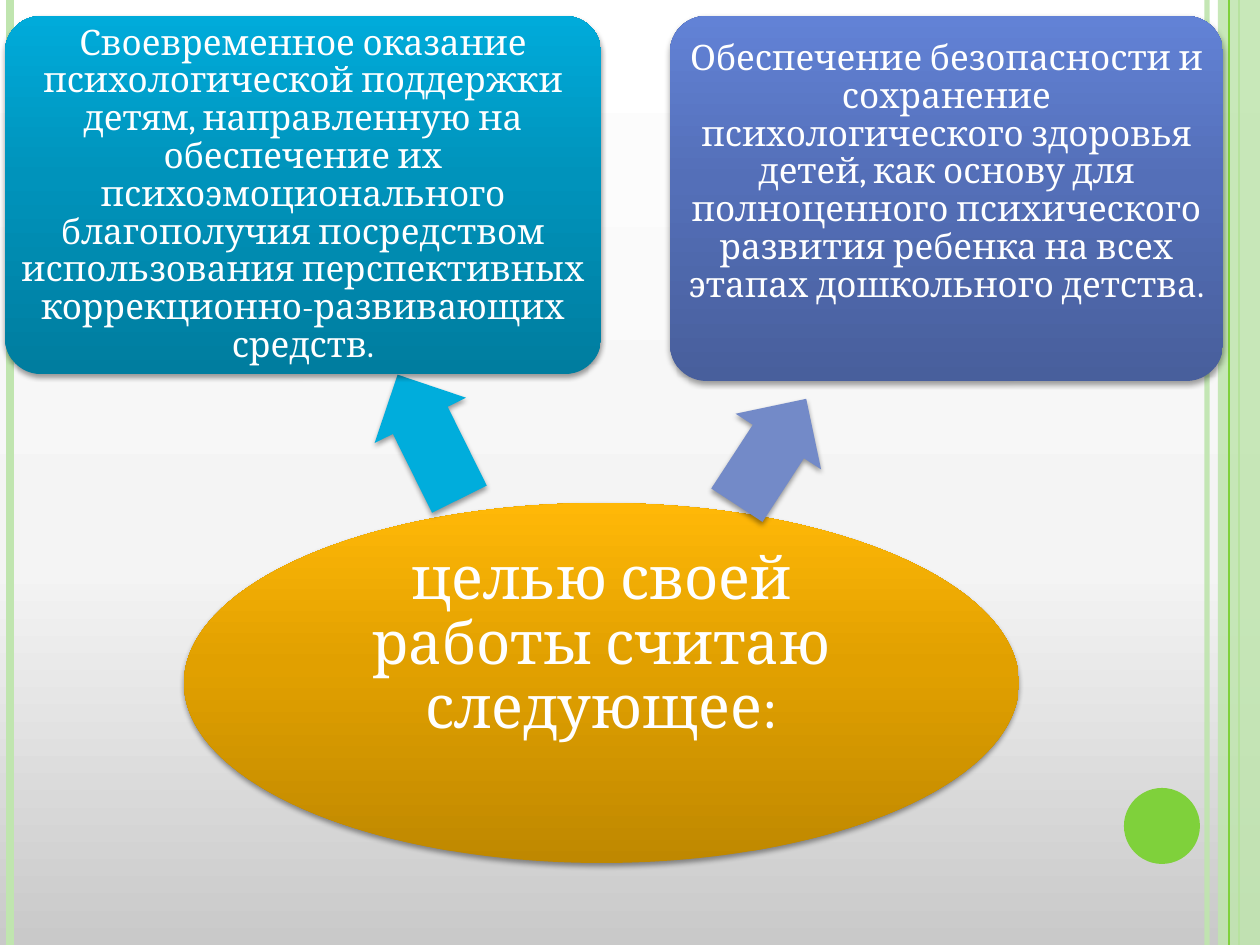
"""Build a slide with a central goal ellipse and arrows to two goal cards."""
from lxml import etree
from pptx import Presentation
from pptx.dml.color import RGBColor
from pptx.enum.shapes import MSO_CONNECTOR, MSO_SHAPE
from pptx.enum.text import MSO_ANCHOR, PP_ALIGN
from pptx.oxml.ns import qn
from pptx.util import Pt

PX = 914400 / 126
WIDTH, HEIGHT = 1260, 945
STRAIGHT = MSO_CONNECTOR.STRAIGHT
RECTANGLE, ELLIPSE = MSO_SHAPE.RECTANGLE, MSO_SHAPE.OVAL
CARD, ARROW = MSO_SHAPE.ROUNDED_RECTANGLE, MSO_SHAPE.LEFT_ARROW
MIDDLE, CENTER = MSO_ANCHOR.MIDDLE, PP_ALIGN.CENTER
WHITE = RGBColor(0xFF, 0xFF, 0xFF)
PALE_GREEN = RGBColor(0xC0, 0xE5, 0xAF)
GREEN = RGBColor(0x7F, 0xD1, 0x3B)
CYAN = RGBColor(0x00, 0xAD, 0xDC)
PERIWINKLE = RGBColor(0x73, 0x8A, 0xC8)
PAGE_STOPS = ((0, "C9C9C9"), (40, "F4F4F4"), (100, "FFFFFF"))
AMBER_STOPS = ((0, "BF8800"), (55, "E1A000"), (100, "FFB807"))
CYAN_STOPS = ((0, "007D9F"), (55, "0093BB"), (100, "00ABDA"))
BLUE_STOPS = ((0, "485F9C"), (55, "546FB8"), (100, "6282D6"))

AIM = "целью своей работы считаю следующее:"
SUPPORT = (
    "Своевременное оказание психологической поддержки детям, направленную на "
    "обеспечение их психоэмоционального благополучия посредством использования "
    "перспективных коррекционно-развивающих средств."
)
SAFETY = (
    "Обеспечение безопасности и сохранение психологического здоровья детей, "
    "как основу для полноценного психического развития ребенка на всех этапах "
    "дошкольного детства."
)


def set_gradient(fill, element, stops):
    fill.gradient()
    gradient = next(element.iter(qn("a:gradFill")))
    stop_list = gradient.find(qn("a:gsLst"))
    for stop in list(stop_list):
        stop_list.remove(stop)
    for position, color in stops:
        stop = etree.SubElement(stop_list, qn("a:gs"), pos=str(position * 1000))
        etree.SubElement(stop, qn("a:srgbClr"), val=color)
    gradient.find(qn("a:lin")).set("ang", "16200000")


def add_stripe(page, x, color, weight):
    left = round(x * PX)
    stripe = page.shapes.add_connector(STRAIGHT, left, 0, left, round(HEIGHT * PX))
    stripe.line.color.rgb = color
    stripe.line.width = Pt(weight)
    etree.SubElement(stripe.element.spPr, qn("a:effectLst"))
    return stripe


deck = Presentation()
deck.slide_width, deck.slide_height = round(WIDTH * PX), round(HEIGHT * PX)
page = deck.slides.add_slide(deck.slide_layouts[6])
set_gradient(page.background.fill, page.element, PAGE_STOPS)

wide_stripe = add_stripe(page, 1207, PALE_GREEN, 3)
add_stripe(page, 10, PALE_GREEN, 4.5)
add_stripe(page, 1239, GREEN, 1.5)
band = page.shapes.add_shape(RECTANGLE, *(round(n * PX) for n in (1218, 0, 42, HEIGHT)))
add_stripe(page, 1229, GREEN, 0.75)
dot = page.shapes.add_shape(ELLIPSE, *(round(n * PX) for n in (1124, 788, 76, 76)))
for shape, color in ((band, PALE_GREEN), (dot, GREEN)):
    shape.fill.solid()
    shape.fill.fore_color.rgb = color
    shape.line.fill.background()
    shape.shadow.inherit = False
for shape, opacity in ((wide_stripe, 93), (band, 87)):
    color = next(shape.element.iter(qn("a:srgbClr")))
    etree.SubElement(color, qn("a:alpha"), val=str(opacity * 1000))

diagram = (
    (ELLIPSE, (184, 503, 835, 360), 0, AMBER_STOPS, (), AIM, 34, 3, 76),
    (ARROW, (359, 386, 139, 102), 63.6, CYAN, (0.6, 0.5), "", 0, 0, 0),
    (CARD, (5, 16, 596, 358), 0, CYAN_STOPS, (0.1,), SUPPORT, 20, 5, 0),
    (ARROW, (708, 401, 127, 102), 123.1, PERIWINKLE, (0.6, 0.5), "", 0, 0, 0),
    (CARD, (670, 16, 553, 365), 0, BLUE_STOPS, (0.1,), SAFETY, 20, 5, 52),
)
for kind, bounds, angle, paint, adjustments, text, size, inset, lift in diagram:
    shape = page.shapes.add_shape(kind, *(round(n * PX) for n in bounds))
    shape.rotation = angle
    for index, value in enumerate(adjustments):
        shape.adjustments[index] = value
    if kind == ARROW:
        shape.fill.solid()
        shape.fill.fore_color.rgb = paint
    else:
        set_gradient(shape.fill, shape.element, paint)
    shape.line.fill.background()
    shape.shadow.inherit = False
    effects = shape.element.spPr.find(qn("a:effectLst"))
    shadow = etree.SubElement(
        effects, qn("a:outerShdw"), blurRad="40000", dist="23000", dir="5400000", rotWithShape="0"
    )
    color = etree.SubElement(shadow, qn("a:srgbClr"), val="000000")
    etree.SubElement(color, qn("a:alpha"), val="38000")
    if text:
        frame = shape.text_frame
        frame.word_wrap = True
        frame.vertical_anchor = MIDDLE
        frame.margin_left = frame.margin_right = frame.margin_top = round(inset * PX)
        frame.margin_bottom = round((inset + lift) * PX)
        para = frame.paragraphs[0]
        para.text = text
        para.alignment = CENTER
        para.line_spacing = 0.9
        para.font.name = "Cambria"
        para.font.size = Pt(size)
        para.font.color.rgb = WHITE

deck.save("out.pptx")
